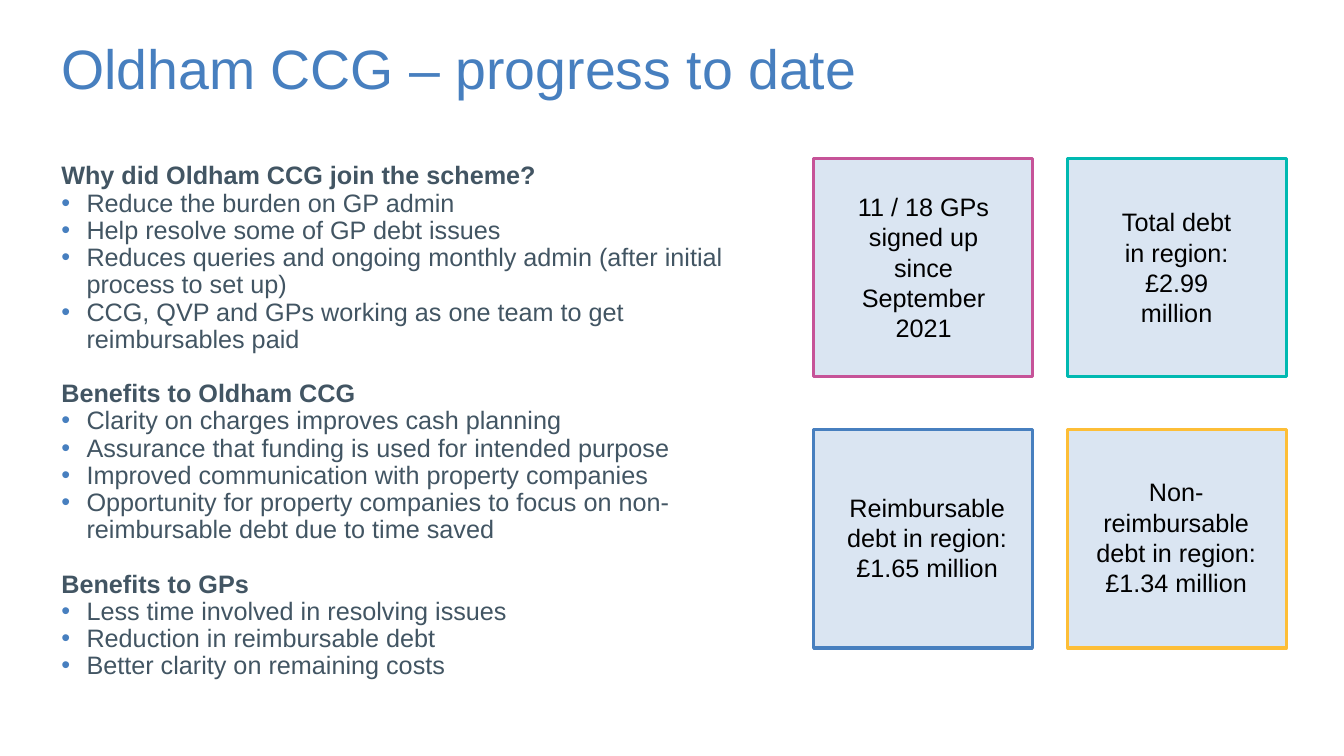
from lxml.etree import SubElement
from pptx import Presentation
from pptx.dml.color import RGBColor
from pptx.enum.shapes import MSO_SHAPE
from pptx.enum.text import MSO_ANCHOR, MSO_AUTO_SIZE, PP_ALIGN
from pptx.oxml.ns import qn
from pptx.util import Pt

PX = 9144  # 100 px to the inch
COLOURS = {
    "blue": "477FBF", "slate": "425563", "black": "000000", "pale": "DAE5F2",
    "pink": "C65398", "teal": "00B9B1", "amber": "FDBE37",
}
SECTIONS = [
    ("Why did Oldham CCG join the scheme?", [
        "Reduce the burden on GP admin",
        "Help resolve some of GP debt issues",
        "Reduces queries and ongoing monthly admin (after initial process to set up)",
        "CCG, QVP and GPs working as one team to get reimbursables paid",
    ]),
    ("Benefits to Oldham CCG", [
        "Clarity on charges improves cash planning",
        "Assurance that funding is used for intended purpose",
        "Improved communication with property companies",
        "Opportunity for property companies to focus on non-reimbursable debt due to time saved",
    ]),
    ("Benefits to GPs", [
        "Less time involved in resolving issues",
        "Reduction in reimbursable debt",
        "Better clarity on remaining costs",
    ]),
]
CARD_SIZE = 217
CARD_LEFTS = (807, 1059)
CARD_TOPS = (157, 426)
# column, row, border, text box, lines
CARDS = [
    (0, 0, "pink", (839, 185, 154, 162), ["11 / 18 GPs signed up since September 2021"]),
    (1, 0, "teal", (1090, 200, 154, 131), ["Total debt in region:", "£2.99 million"]),
    (0, 1, "blue", (829, 483, 181, 101), ["Reimbursable debt in region:", "£1.65 million"]),
    (1, 1, "amber", (1064, 468, 205, 131), ["Non-reimbursable debt in region:", "£1.34 million"]),
]


def colour(name):
    return RGBColor.from_string(COLOURS[name])


def add_bullet(para, indent):
    properties = para._p.get_or_add_pPr()
    properties.set("marL", str(indent * PX))
    properties.set("indent", str(-indent * PX))
    bullet_colour = SubElement(properties, qn("a:buClr"))
    SubElement(bullet_colour, qn("a:srgbClr"), val=COLOURS["blue"])
    SubElement(properties, qn("a:buFont"), typeface="Arial")
    SubElement(properties, qn("a:buChar"), char="•")


class SlideBuilder:
    font_name = "Arial"
    text_size = 18

    def __init__(self, deck):
        self.page = deck.slides.add_slide(deck.slide_layouts[5])

    def set_font(self, para, colour_name, size=text_size, bold=False):
        para.font.name = self.font_name
        para.font.size = Pt(size)
        para.font.bold = bold
        para.font.color.rgb = colour(colour_name)

    def title(self, text, left, top, width, height):
        box = self.page.shapes.title
        box.left, box.top, box.width, box.height = (n * PX for n in (left, top, width, height))
        frame = box.text_frame
        frame.text = text
        frame.auto_size = MSO_AUTO_SIZE.NONE
        frame.vertical_anchor = MSO_ANCHOR.MIDDLE
        para = frame.paragraphs[0]
        para.alignment = PP_ALIGN.LEFT
        para.line_spacing = 0.9
        self.set_font(para, "blue", 39.6)

    def text_frame(self, left, top, width, height):
        box = self.page.shapes.add_textbox(*(n * PX for n in (left, top, width, height)))
        box.text_frame.word_wrap = True
        return box.text_frame

    def sections(self, sections, *place):
        """Write bold headings, each followed by its bullets, in one text box."""
        frame = self.text_frame(*place)
        para = frame.paragraphs[0]
        for number, (heading, points) in enumerate(sections):
            if number:
                para = frame.add_paragraph()
                para.space_before = Pt(19.4)
            para.text = heading
            para.line_spacing = 0.9
            self.set_font(para, "slate", bold=True)
            for point in points:
                para = frame.add_paragraph()
                para.text = point
                para.line_spacing = 0.9
                add_bullet(para, 25)
                self.set_font(para, "slate")

    def square(self, left, top, size, border):
        square = self.page.shapes.add_shape(
            MSO_SHAPE.RECTANGLE, left * PX, top * PX, size * PX, size * PX)
        square.shadow.inherit = False
        square.fill.solid()
        square.fill.fore_color.rgb = colour("pale")
        square.line.color.rgb = colour(border)
        square.line.width = Pt(2.25)

    def centred_text(self, lines, *place):
        frame = self.text_frame(*place)
        frame.auto_size = MSO_AUTO_SIZE.SHAPE_TO_FIT_TEXT
        frame.text = "\n".join(lines)
        for para in frame.paragraphs:
            para.alignment = PP_ALIGN.CENTER
            self.set_font(para, "black")


def main():
    deck = Presentation()
    deck.slide_width, deck.slide_height = 1333 * PX, 750 * PX
    slide = SlideBuilder(deck)
    slide.title("Oldham CCG – progress to date", 51, 37, 1048, 67)
    slide.sections(SECTIONS, 51, 157, 719, 576)
    for column, row, border, place, lines in CARDS:
        slide.square(CARD_LEFTS[column], CARD_TOPS[row], CARD_SIZE, border)
        slide.centred_text(lines, *place)
    deck.save("out.pptx")


if __name__ == "__main__":
    main()
